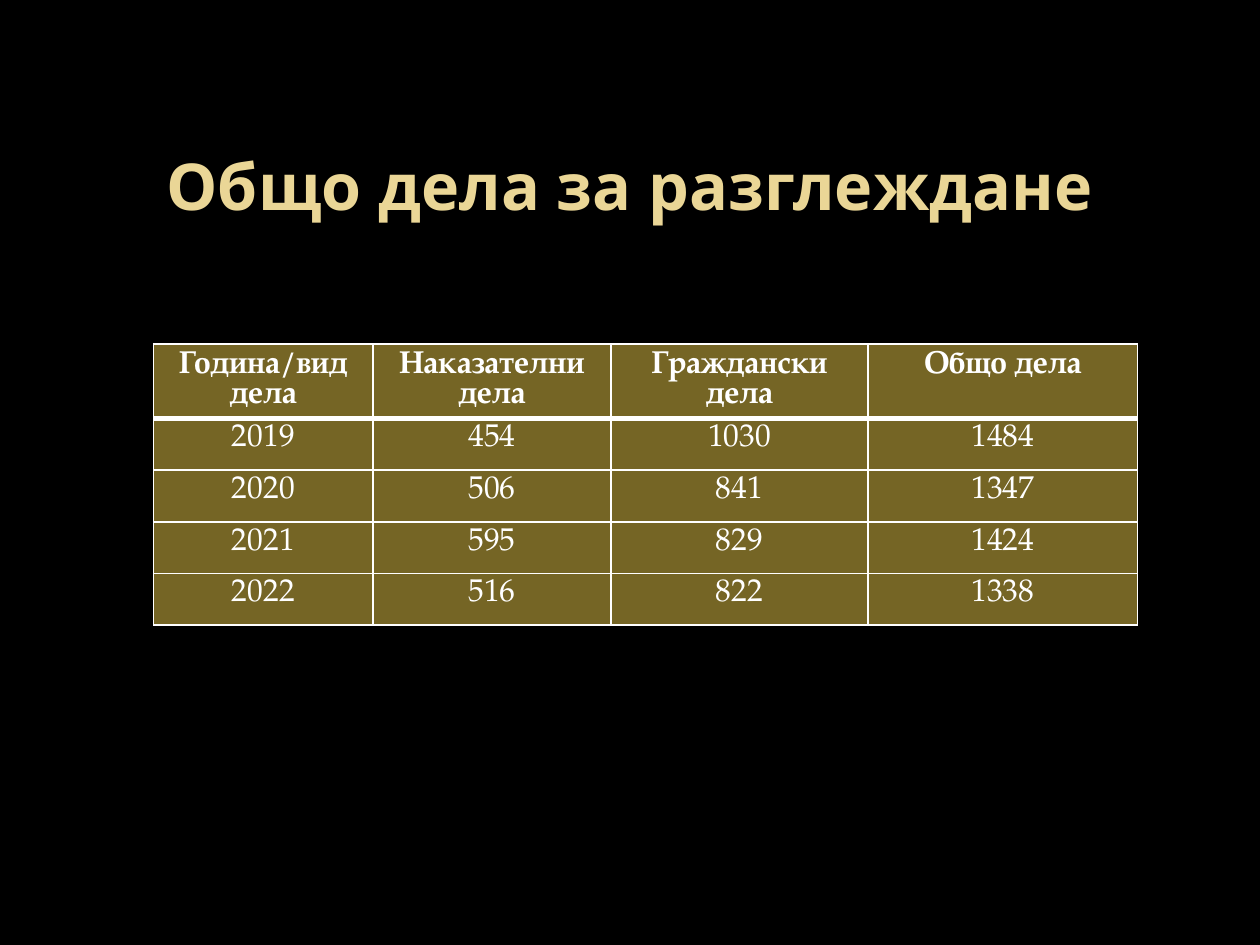
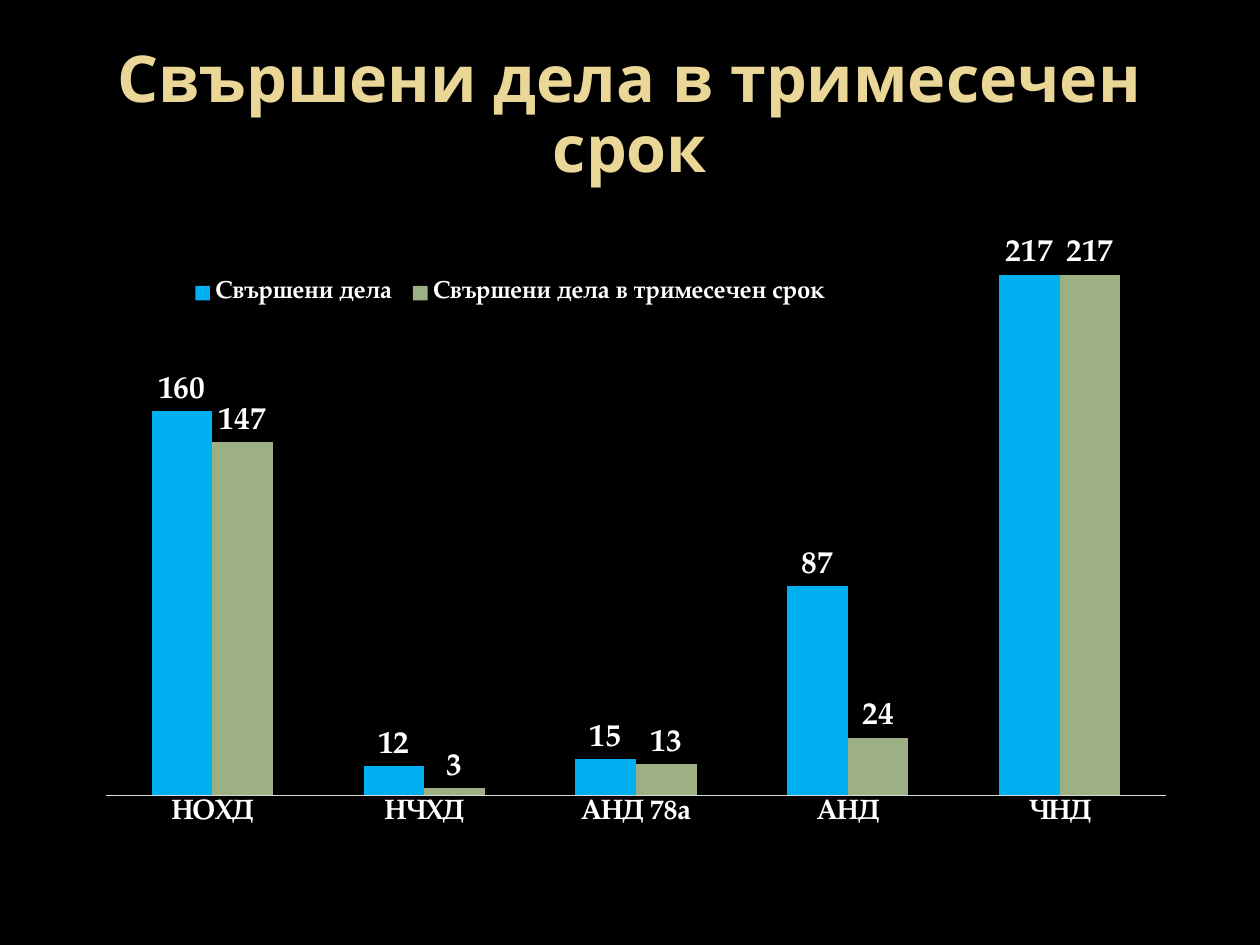
"""Build two slides on court cases: a table of totals and a column chart."""
from lxml.etree import SubElement
from pptx import Presentation
from pptx.chart.data import CategoryChartData
from pptx.dml.color import RGBColor
from pptx.enum.chart import XL_CHART_TYPE as ChartType
from pptx.enum.chart import XL_LABEL_POSITION as LabelPosition
from pptx.enum.chart import XL_LEGEND_POSITION as LegendPosition
from pptx.enum.chart import XL_TICK_MARK as TickMark
from pptx.enum.text import MSO_ANCHOR as Anchor
from pptx.enum.text import MSO_AUTO_SIZE as AutoSize
from pptx.enum.text import PP_ALIGN as Align
from pptx.oxml import parse_xml
from pptx.oxml.ns import nsdecls, qn
from pptx.util import Inches, Pt

COLORS = {
    name: RGBColor.from_string(value)
    for name, value in {
        "background": "000000",
        "title": "EAD696",
        "text": "FFFFFF",
        "cell": "756525",
        "axis": "D9D9D9",
        "finished": "00B0F0",
        "in_term": "9CB084",
    }.items()
}
TITLE_FONT = "Open Sans"
BODY_FONT = "TeX Gyre Pagella"


def style_font(font, name, size, color, bold):
    font.name = name
    font.size = Pt(size)
    font.bold = bold
    font.color.rgb = COLORS[color]


def set_layout(element, before, x, y, width, height, inner=False):
    layout = parse_xml(f'<c:layout {nsdecls("c")}><c:manualLayout/></c:layout>')
    settings = {"layoutTarget": "inner"} if inner else {}
    settings |= {"xMode": "edge", "yMode": "edge", "x": x, "y": y, "w": width, "h": height}
    for tag, value in settings.items():
        SubElement(layout[0], qn(f"c:{tag}")).set("val", str(value))
    for old_layout in element.findall(qn("c:layout")):
        element.remove(old_layout)
    element.find(qn(f"c:{before}")).addprevious(layout)


presentation = Presentation()
presentation.slide_width, presentation.slide_height = Inches(10), Inches(7.5)
background = presentation.slide_master.background.fill
background.solid()
background.fore_color.rgb = COLORS["background"]

slides = []
for heading, top, anchor in (
    ("Общо дела за разглеждане", 1.23, Anchor.TOP),
    ("Свършени дела в тримесечен срок", 0.3, Anchor.MIDDLE),
):
    slide = presentation.slides.add_slide(presentation.slide_layouts[5])
    title = slide.shapes.title
    title.left, title.top = Inches(0.5), Inches(top)
    title.width, title.height = Inches(9), Inches(1.25)
    frame = title.text_frame
    frame.text = heading
    frame.word_wrap = True
    frame.auto_size = AutoSize.NONE
    frame.vertical_anchor = anchor
    frame.margin_top = frame.margin_bottom = 0
    paragraph = frame.paragraphs[0]
    paragraph.alignment = Align.CENTER
    paragraph.line_spacing = 0.9
    style_font(paragraph.runs[0].font, TITLE_FONT, 36.9, "title", True)
    slides.append(slide)
totals_slide, terms_slide = slides

criminal = {2019: 454, 2020: 506, 2021: 595, 2022: 516}
civil = {2019: 1030, 2020: 841, 2021: 829, 2022: 822}
rows = [("Година/вид дела", "Наказателни дела", "Граждански дела", "Общо дела")]
rows += [(year, criminal[year], civil[year], criminal[year] + civil[year]) for year in criminal]
column_widths = (1.74, 1.89, 2.04, 2.14)
row_heights = (0.59, *[0.41] * len(criminal))

table = totals_slide.shapes.add_table(
    len(rows), len(column_widths), Inches(1.22), Inches(2.73),
    Inches(sum(column_widths)), Inches(sum(row_heights)),
).table
for column, width in zip(table.columns, column_widths):
    column.width = Inches(width)
for row_index, (row, height) in enumerate(zip(rows, row_heights)):
    table.rows[row_index].height = Inches(height)
    for column_index, value in enumerate(row):
        cell = table.cell(row_index, column_index)
        cell.text = str(value)
        paragraph = cell.text_frame.paragraphs[0]
        paragraph.alignment = Align.CENTER
        paragraph.line_spacing = Pt(17.7)
        style_font(paragraph.runs[0].font, BODY_FONT, 18, "text", row_index == 0)
        properties = cell._tc.get_or_add_tcPr()
        for side in "LRTB":
            under_header = (row_index, side) in ((0, "B"), (1, "T"))
            properties.append(parse_xml(
                f'<a:ln{side} {nsdecls("a")} w="{Pt(3 if under_header else 1)}"><a:solidFill>'
                f'<a:srgbClr val="{COLORS["text"]}"/></a:solidFill></a:ln{side}>'
            ))
        cell.fill.solid()
        cell.fill.fore_color.rgb = COLORS["cell"]

chart_data = CategoryChartData()
chart_data.categories = ("НОХД", "НЧХД", "АНД 78а", "АНД", "ЧНД")
chart_data.add_series("Свършени дела", (160, 12, 15, 87, 217))
chart_data.add_series("Свършени дела в тримесечен срок", (147, 3, 13, 24, 217))
chart = terms_slide.shapes.add_chart(
    ChartType.COLUMN_CLUSTERED, Inches(0.67), Inches(1.39), Inches(8.67), Inches(5.35), chart_data
).chart
style_font(chart.font, BODY_FONT, 10, "text", False)
chart.has_title = False
chart.has_legend = True
chart.legend.position = LegendPosition.TOP
chart.legend.include_in_layout = False
style_font(chart.legend.font, BODY_FONT, 14, "text", True)
set_layout(chart.legend._element, "overlay", 0.09, 0.15, 0.6, 0.05)
set_layout(chart._chartSpace.chart.plotArea, "barChart", 0.02, 0.03, 0.97, 0.89, inner=True)

value_axis = chart.value_axis
value_axis.visible = False
value_axis.has_major_gridlines = False
value_axis.minimum_scale, value_axis.maximum_scale = 0, 250
category_axis = chart.category_axis
category_axis.major_tick_mark = TickMark.NONE
category_axis.format.line.color.rgb = COLORS["axis"]
category_axis.format.line.width = Pt(0.75)
style_font(category_axis.tick_labels.font, BODY_FONT, 16, "text", True)

plot = chart.plots[0]
plot.gap_width, plot.overlap = 150, 0
plot.vary_by_categories = False
for series, color in zip(plot.series, ("finished", "in_term")):
    series.format.fill.solid()
    series.format.fill.fore_color.rgb = COLORS[color]
    labels = series.data_labels
    labels.show_value = True
    labels.position = LabelPosition.OUTSIDE_END
    style_font(labels.font, BODY_FONT, 18, "text", True)

presentation.save("out.pptx")
